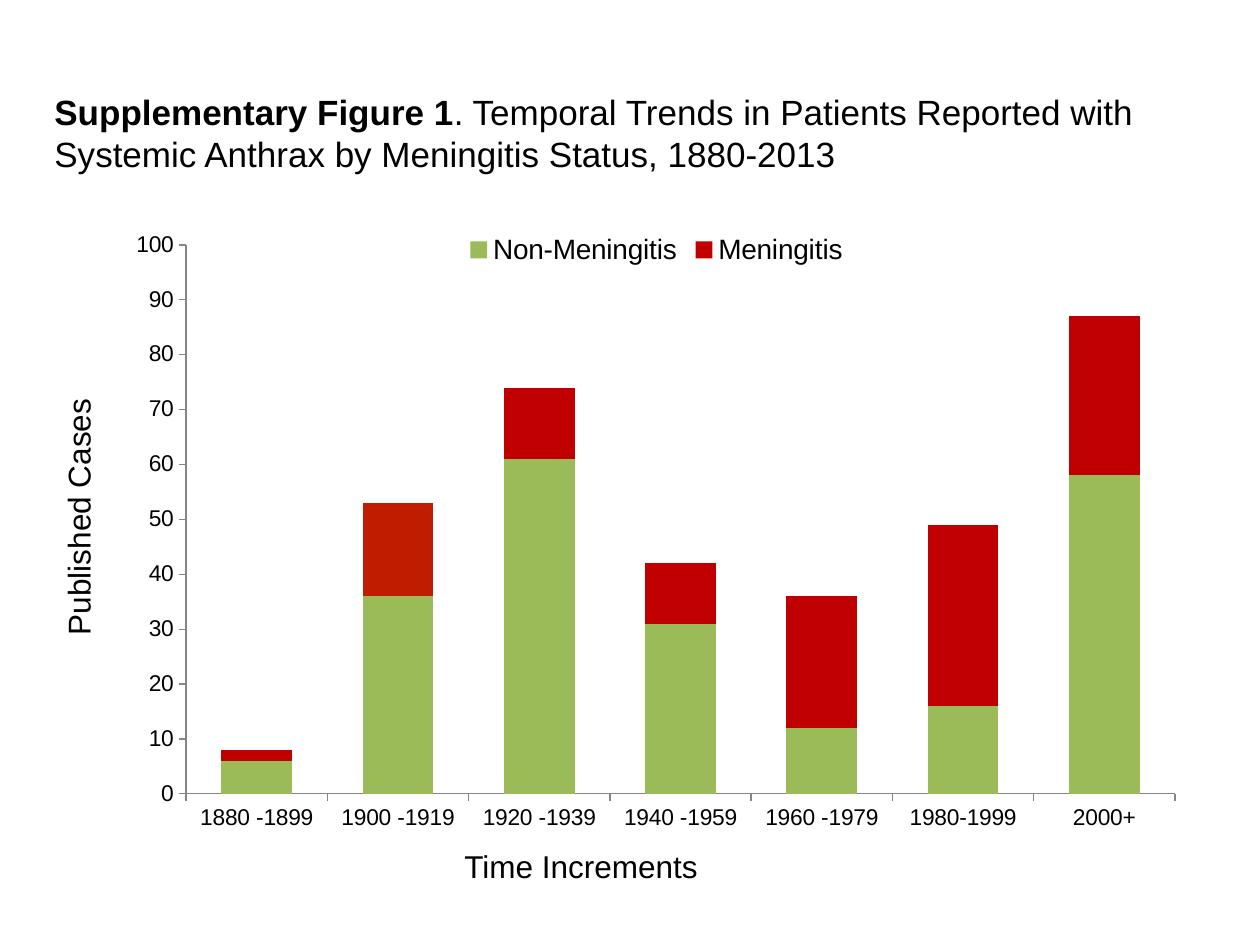
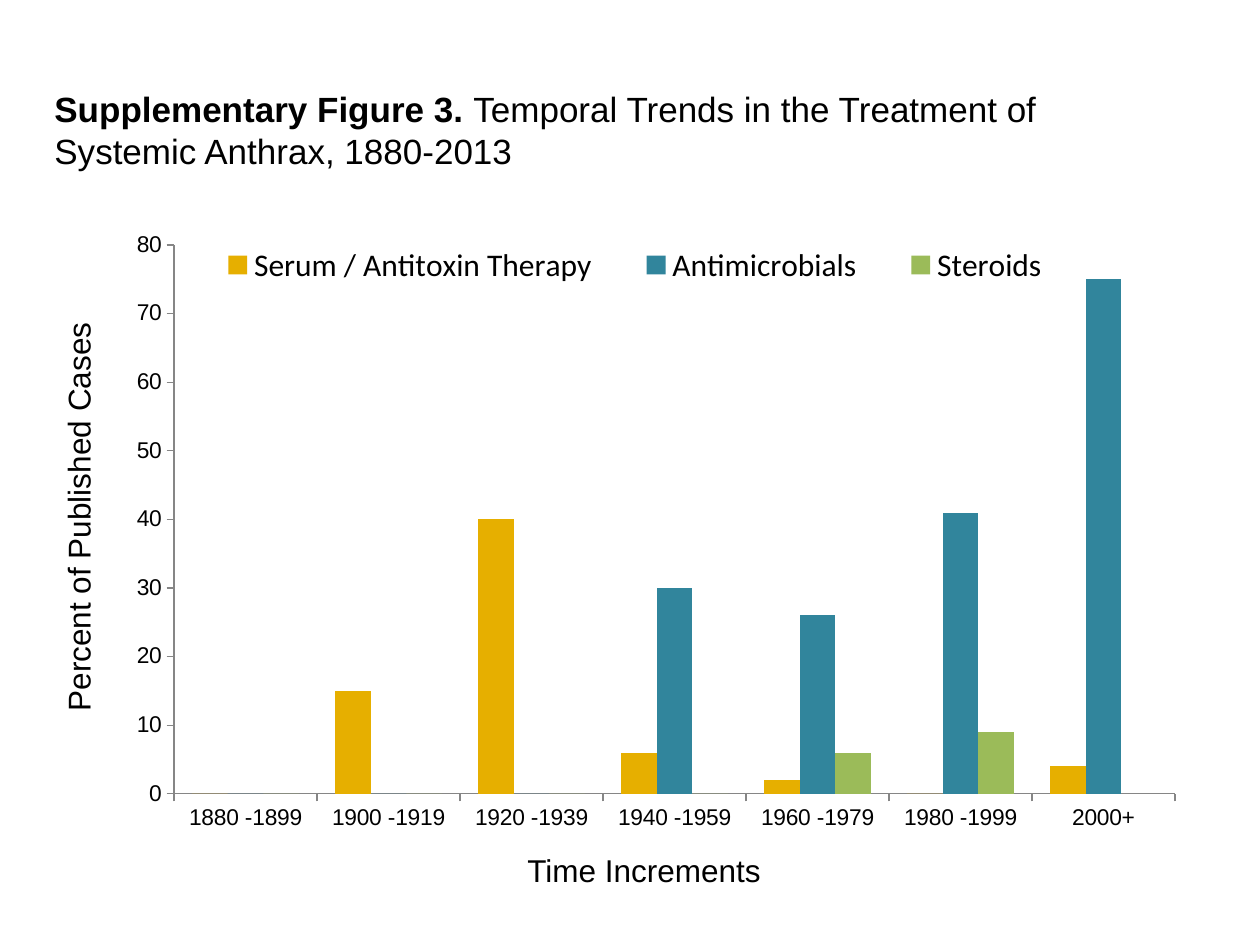
from pptx import Presentation
from pptx.chart.data import CategoryChartData
from pptx.dml.color import RGBColor
from pptx.enum.chart import XL_CHART_TYPE, XL_LEGEND_POSITION, XL_TICK_MARK
from pptx.enum.text import MSO_ANCHOR, PP_ALIGN
from pptx.oxml import parse_xml
from pptx.oxml.ns import nsdecls, qn
from pptx.util import Emu, Pt

STACKED, CLUSTERED = XL_CHART_TYPE.COLUMN_STACKED, XL_CHART_TYPE.COLUMN_CLUSTERED
TOP, OUTSIDE, NO_TICK = XL_LEGEND_POSITION.TOP, XL_TICK_MARK.OUTSIDE, XL_TICK_MARK.NONE
MIDDLE, LEFT, CENTER = MSO_ANCHOR.MIDDLE, PP_ALIGN.LEFT, PP_ALIGN.CENTER

# Shared style
BLACK, AXIS_GRAY = "000000", "868686"
GREEN, RED, ORANGE_RED, GOLD, TEAL = "9BBB59", "C00000", "C01D00", "E6AF00", "31859C"
SANS, CHART_FONT = "Arial", "Calibri"

# Shared layout in px: left, top, width, height
PX_PER_INCH = 126
SLIDE_W, SLIDE_H = 1260, 945
CHART = (116, 220, 1081, 624)
PLOT_TOP, PLOT_RIGHT, PLOT_BOTTOM = 245, 1175, 794
TITLE_LEFT, TITLE_W = 42, 1124
LABEL_H = 50
Y_LABEL_CENTER = (78, 517)

# Content
PERIODS = ["1880 -1899", "1900 -1919", "1920 -1939", "1940 -1959", "1960 -1979"]

FIGURES = [
    {
        "title": ("Supplementary Figure 1",
                  ". Temporal Trends in Patients Reported with Systemic Anthrax "
                  "by Meningitis Status, 1880-2013"),
        "title_y": (53, 158),
        "type": STACKED,
        "periods": PERIODS + ["1980-1999", "2000+"],
        "series": [("Non-Meningitis", GREEN, (6, 36, 61, 31, 12, 16, 58)),
                   ("Meningitis", RED, (2, 17, 13, 11, 24, 33, 29))],
        "point_colors": [(1, 1, ORANGE_RED)],
        "max": 100,
        "plot_left": 186,
        "legend_font": (SANS, 16),
        "legend_box": None,
        "x_label": ("Time Increments", 261, (581, 866)),
        "y_label": ("Published Cases", 265),
    },
    {
        "title": ("Supplementary Figure 3. ",
                  "Temporal Trends in the Treatment of Systemic Anthrax, 1880-2013"),
        "title_y": (49, 161),
        "type": CLUSTERED,
        "periods": PERIODS + ["1980 -1999", "2000+"],
        "series": [("Serum / Antitoxin Therapy", GOLD, (0, 15, 40, 6, 2, 0, 4)),
                   ("Antimicrobials", TEAL, (0, 0, 0, 30, 26, 41, 75)),
                   ("Steroids", GREEN, (0, 0, 0, 0, 6, 9, None))],
        "point_colors": [],
        "max": 80,
        "plot_left": 174,
        "legend_font": (CHART_FONT, 18),
        "legend_box": (184, 240, 902, 50),
        "x_label": ("Time Increments", 260, (644, 870)),
        "y_label": ("Percent of Published Cases", 418),
    },
]


def px(n):
    return Emu(round(n * 914400 / PX_PER_INCH))


def rgb(value):
    return RGBColor.from_string(value)


def set_font(font, name, size, bold=False):
    font.name, font.size, font.bold = name, Pt(size), bold
    font.color.rgb = rgb(BLACK)


def add_text(s, box, parts, size, align=LEFT, wrap=True):
    """Add one paragraph; each part is a (text, bold) pair."""
    sp = s.shapes.add_textbox(*map(px, box))
    tf = sp.text_frame
    tf.word_wrap, tf.vertical_anchor = wrap, MIDDLE
    p = tf.paragraphs[0]
    p.alignment = align
    for text, bold in parts:
        r = p.add_run()
        r.text = text
        set_font(r.font, SANS, size, bold)
    return sp


def add_axis_label(s, text, width, center, rotation=0):
    x, y = center
    box = (x - width / 2, y - LABEL_H / 2, width, LABEL_H)
    add_text(s, box, [(text, False)], 18, CENTER, wrap=False).rotation = rotation


def manual_layout(box, inner=False):
    """Layout element placing a box, given in slide px, inside the chart."""
    x, y, w, h = CHART
    fractions = zip("xywh", ((box[0] - x) / w, (box[1] - y) / h, box[2] / w, box[3] / h))
    target = '<c:layoutTarget val="inner"/>' if inner else ""
    modes = '<c:xMode val="edge"/><c:yMode val="edge"/>'
    sizes = "".join(f'<c:{name} val="{value:.4f}"/>' for name, value in fractions)
    return parse_xml(f'<c:layout {nsdecls("c")}><c:manualLayout>{target}{modes}{sizes}'
                     "</c:manualLayout></c:layout>")


def replace_layout(parent, index, layout):
    for old in parent.findall(qn("c:layout")):
        parent.remove(old)
    parent.insert(index, layout)


def add_figure_chart(s, fig):
    data = CategoryChartData()
    data.categories = fig["periods"]
    for name, _, values in fig["series"]:
        data.add_series(name, values)
    chart = s.shapes.add_chart(fig["type"], *map(px, CHART), data).chart
    chart.has_title = False
    set_font(chart.font, CHART_FONT, 18)

    # Columns
    plot = chart.plots[0]
    plot.vary_by_categories = False
    plot.gap_width = 100
    plot.overlap = 100 if fig["type"] == STACKED else 0
    for series, (_, color, _) in zip(plot.series, fig["series"]):
        series.format.fill.solid()
        series.format.fill.fore_color.rgb = rgb(color)
    for i, j, color in fig["point_colors"]:
        fill = plot.series[i].points[j].format.fill
        fill.solid()
        fill.fore_color.rgb = rgb(color)

    # Axes
    for axis in (chart.category_axis, chart.value_axis):
        axis.has_major_gridlines = False
        axis.major_tick_mark, axis.minor_tick_mark = OUTSIDE, NO_TICK
        axis.format.line.color.rgb = rgb(AXIS_GRAY)
        axis.format.line.width = Pt(0.75)
        set_font(axis.tick_labels.font, SANS, 13)
    axis.minimum_scale, axis.maximum_scale, axis.major_unit = 0, fig["max"], 10

    # Legend and plot area
    chart.has_legend = True
    legend = chart.legend
    legend.position, legend.include_in_layout = TOP, False
    set_font(legend.font, *fig["legend_font"])
    c_chart = chart.element.find(qn("c:chart")) if hasattr(chart, "element") \
        else chart._chartSpace.find(qn("c:chart"))
    if fig["legend_box"]:
        replace_layout(c_chart.find(qn("c:legend")), 1, manual_layout(fig["legend_box"]))
    plot_box = (fig["plot_left"], PLOT_TOP, PLOT_RIGHT - fig["plot_left"],
                PLOT_BOTTOM - PLOT_TOP)
    replace_layout(c_chart.find(qn("c:plotArea")), 0, manual_layout(plot_box, inner=True))


def add_figure(prs, fig):
    s = prs.slides.add_slide(prs.slide_layouts[6])
    add_figure_chart(s, fig)
    add_axis_label(s, *fig["x_label"])
    add_axis_label(s, *fig["y_label"], Y_LABEL_CENTER, rotation=270)
    top, height = fig["title_y"]
    number, caption = fig["title"]
    add_text(s, (TITLE_LEFT, top, TITLE_W, height), [(number, True), (caption, False)], 20)


def main():
    prs = Presentation()
    prs.slide_width, prs.slide_height = px(SLIDE_W), px(SLIDE_H)
    for fig in FIGURES:
        add_figure(prs, fig)
    prs.save("out.pptx")


if __name__ == "__main__":
    main()
